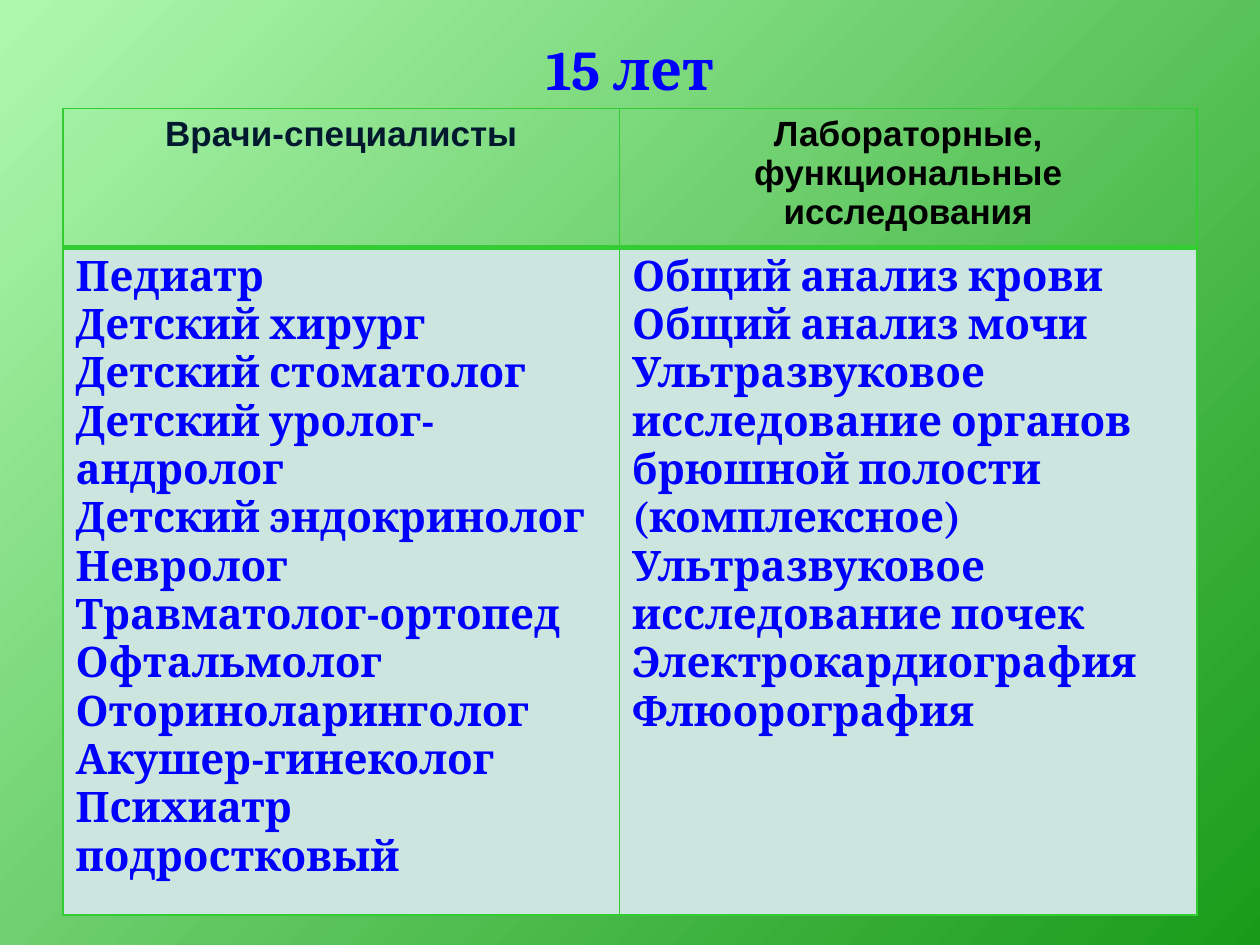
"""Build the slide listing medical examinations at the age of 15."""
from lxml.etree import SubElement
from pptx import Presentation
from pptx.dml.color import RGBColor as RGB
from pptx.enum.text import MSO_ANCHOR as ANCHOR, PP_ALIGN as ALIGN
from pptx.oxml.ns import qn
from pptx.util import Pt

TITLE = "15 лет"
HEADERS = [("Врачи-специалисты", "00192F"),
           ("Лабораторные, функциональные исследования", "000000")]
COLUMNS = [
    ["Педиатр", "Детский хирург", "Детский стоматолог",
     "Детский уролог- андролог", "Детский эндокринолог", "Невролог",
     "Травматолог-ортопед", "Офтальмолог", "Оториноларинголог",
     "Акушер-гинеколог", "Психиатр подростковый"],
    ["Общий анализ крови", "Общий анализ мочи",
     "Ультразвуковое исследование органов брюшной полости (комплексное)",
     "Ультразвуковое исследование почек", "Электрокардиография",
     "Флюорография"],
]
WIDTHS, HEIGHTS = [318, 330], [74, 366]
LEFT, TOP = 36, 62
BLUE, GREEN, PALE = "0000FF", "33CC33", "CDE5DF"
GRADIENT = ["AEF8AE", "199B19"]


def rgb(code):
    return RGB.from_string(code)


def write(tf, lines, size, name, color, align):
    tf.word_wrap = True
    for i, line in enumerate(lines):
        p = tf.paragraphs[0] if i == 0 else tf.add_paragraph()
        p.alignment = align
        r = p.add_run()
        r.text = line
        for key, value in dict(size=Pt(size), name=name, bold=True).items():
            setattr(r.font, key, value)
        r.font.color.rgb = rgb(color)


def border(cell, bottom):
    tcPr = cell._tc.get_or_add_tcPr()
    sides = {"lnL": 1, "lnR": 1, "lnT": 1, "lnB": bottom}
    for i, (side, width) in enumerate(sides.items()):
        ln = SubElement(tcPr, qn(f"a:{side}"), w=str(Pt(width)))
        SubElement(SubElement(ln, qn("a:solidFill")), qn("a:srgbClr"), val=GREEN)
        tcPr.insert(i, ln)


def main():
    prs = Presentation()
    prs.slide_width, prs.slide_height = Pt(720), Pt(540)
    s = prs.slides.add_slide(prs.slide_layouts[6])
    fill = s.background.fill
    fill.gradient()
    fill.gradient_angle = 315
    for stop, color, position in zip(fill.gradient_stops, GRADIENT, (0, 1)):
        stop.color.rgb = rgb(color)
        stop.position = position

    tf = s.shapes.add_textbox(Pt(36), Pt(21.6), Pt(648), Pt(34.6)).text_frame
    tf.vertical_anchor = ANCHOR.MIDDLE
    write(tf, [TITLE], 32, "Cambria", BLUE, ALIGN.CENTER)

    table = s.shapes.add_table(2, 2, Pt(LEFT), Pt(TOP), Pt(sum(WIDTHS)),
                               Pt(sum(HEIGHTS))).table
    table.first_row = table.horz_banding = False
    for row, height in zip(table.rows, HEIGHTS):
        row.height = Pt(height)
    for c, (width, (header, color), lines) in enumerate(zip(WIDTHS, HEADERS, COLUMNS)):
        table.columns[c].width = Pt(width)
        head, body = table.cell(0, c), table.cell(1, c)
        head.fill.background()
        body.fill.solid()
        body.fill.fore_color.rgb = rgb(PALE)
        border(head, 3)
        border(body, 1)
        write(head.text_frame, [header], 20, "Arial", color, ALIGN.CENTER)
        write(body.text_frame, lines, 24, "Cambria", BLUE, ALIGN.LEFT)
    prs.save("out.pptx")


if __name__ == "__main__":
    main()
